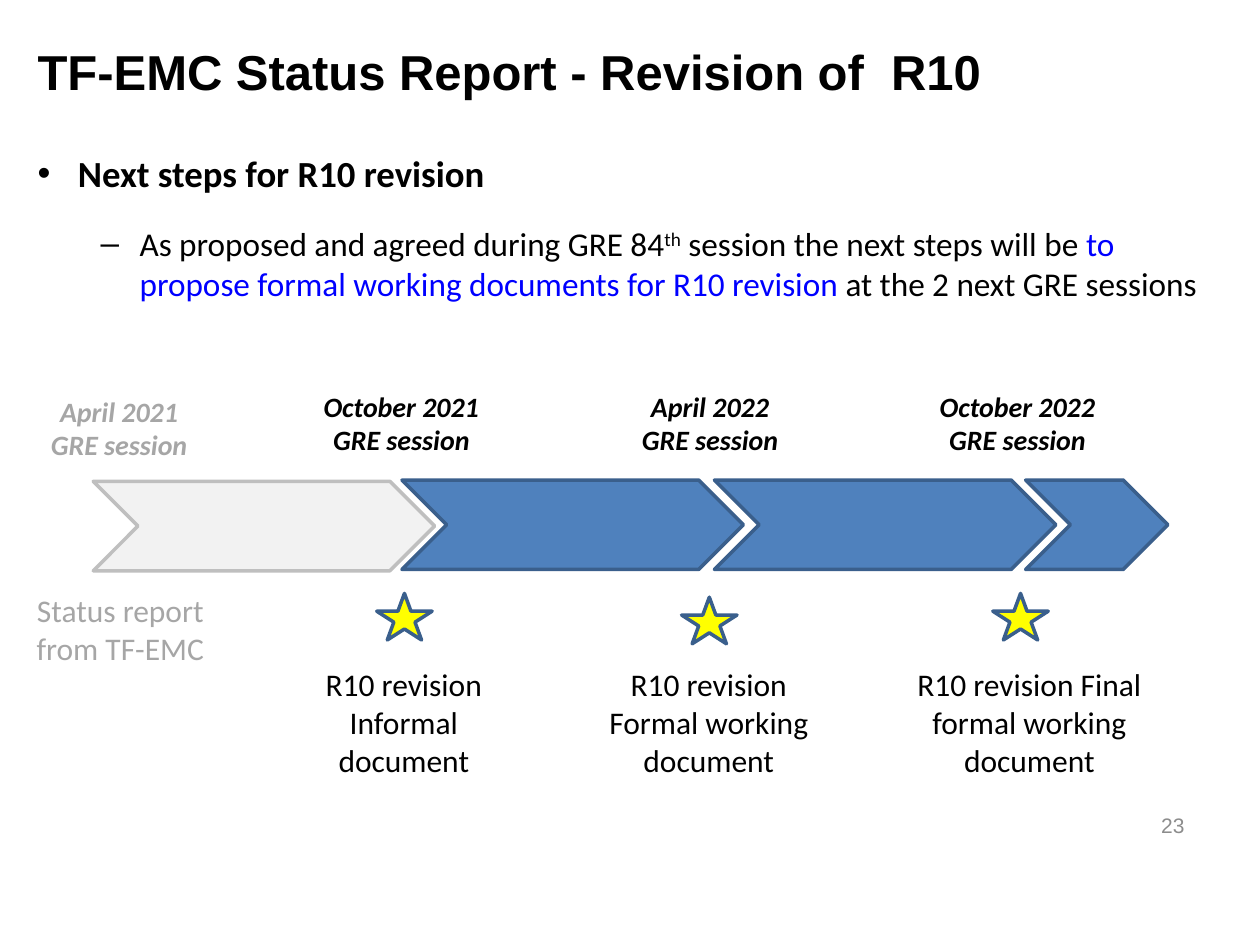
import pptx
import pptx.util
import pptx.dml.color
import pptx.enum.shapes
import pptx.enum.text
import pptx.oxml
import pptx.oxml.ns

Inches = pptx.util.Inches
Pt = pptx.util.Pt
ALIGN = pptx.enum.text.PP_ALIGN
ANCHOR = pptx.enum.text.MSO_ANCHOR
SHAPE = pptx.enum.shapes.MSO_SHAPE

COLORS = {
    "text": "000000", "muted": "A6A6A6", "number": "8C8C8C", "accent": "0000FF",
    "step": "4F81BD", "step_line": "3A5F8C", "past": "F2F2F2", "past_line": "BFBFBF",
    "star": "FFFF00",
}
TITLE = "TF-EMC Status Report - Revision of  R10"
PAGE_NUMBER = "23"
HEADING = "Next steps for R10 revision"
DETAIL = [
    ("As proposed and agreed during GRE 84", "text", False),
    ("th", "text", True),
    (" session the next steps will be ", "text", False),
    ("to propose formal working documents for R10 revision", "accent", False),
    (" at the 2 next GRE sessions", "text", False),
]
ARROWS = [
    (0.74, 3.82, 2.71, "past"),
    (3.19, 3.81, 2.71, "step"),
    (5.67, 3.81, 2.71, "step"),
    (8.14, 3.81, 1.13, "step"),
]
SESSIONS = [
    ("April 2021", 0, 3.08, "muted"),
    ("October 2021", 2.24, 3.04, "text"),
    ("April 2022", 4.69, 3.04, "text"),
    ("October 2022", 7.13, 3.04, "text"),
]
OUTCOMES = [
    ("Status report from TF-EMC", 0.01, 4.64, 1.89, 0.71, "muted"),
    ("R10 revision Informal document", 2.26, 5.23, 1.89, 1.01, "text"),
    ("R10 revision Formal working document", 4.68, 5.23, 1.89, 1.01, "text"),
    ("R10 revision Final formal working document", 7.02, 5.23, 2.3, 1.01, "text"),
]
STARS = [(2.99, 4.71), (5.41, 4.74), (7.88, 4.71)]


def rgb(name):
    return pptx.dml.color.RGBColor.from_string(COLORS[name])


def style(font, size, color="text", name="Calibri", bold=False, italic=False):
    font.size = Pt(size)
    font.name = name
    font.bold = bold
    font.italic = italic
    font.color.rgb = rgb(color)


def add_text(slide, place, lines, size, align=ALIGN.CENTER, anchor=ANCHOR.TOP, **look):
    box = slide.shapes.add_textbox(*map(Inches, place))
    frame = box.text_frame
    frame.word_wrap = True
    frame.vertical_anchor = anchor
    frame.text = "\n".join(lines)
    for para in frame.paragraphs:
        para.alignment = align
        style(para.font, size, **look)
    return frame


def add_figure(slide, kind, place, fill, line):
    shape = slide.shapes.add_shape(kind, *map(Inches, place))
    shape.shadow.inherit = False
    shape.fill.solid()
    shape.fill.fore_color.rgb = rgb(fill)
    shape.line.color.rgb = rgb(line)
    shape.line.width = Pt(2)


def add_bullet(para, symbol, margin, indent):
    properties = para._p.get_or_add_pPr()
    properties.set("marL", str(Inches(margin)))
    properties.set("indent", str(Inches(indent)))
    for tag, key, value in (("a:buFont", "typeface", "Arial"), ("a:buChar", "char", symbol)):
        element = pptx.oxml.parse_xml(f"<{tag} {pptx.oxml.ns.nsdecls('a')}/>")
        element.set(key, value)
        properties.append(element)
    para.space_after = Pt(12)


def add_body(slide):
    box = slide.shapes.add_textbox(Inches(0.2), Inches(1.15), Inches(9.48), Inches(1.65))
    frame = box.text_frame
    frame.word_wrap = True
    heading = frame.paragraphs[0]
    heading.text = HEADING
    add_bullet(heading, "•", 0.32, -0.32)
    style(heading.font, 21, bold=True)

    detail = frame.add_paragraph()
    detail.level = 1
    add_bullet(detail, "–", 0.81, -0.31)
    detail.space_before = Pt(4)
    style(detail.font, 19)
    for text, color, raised in DETAIL:
        span = detail.add_run()
        span.text = text
        style(span.font, 19, color)
        if raised:
            span._r.get_or_add_rPr().set("baseline", "30000")


def main():
    deck = pptx.Presentation()
    deck.slide_width = Inches(10)
    deck.slide_height = Inches(7.5)
    slide = deck.slides.add_slide(deck.slide_layouts[6])

    add_text(slide, (0.2, 0.21, 9.45, 0.71), [TITLE], 28, ALIGN.LEFT, ANCHOR.MIDDLE,
             name="Arial", bold=True)
    add_text(slide, (7.17, 6.35, 2.33, 0.4), [PAGE_NUMBER], 12, ALIGN.RIGHT, ANCHOR.MIDDLE,
             name="Arial", color="number")
    add_body(slide)

    for left, top, width, kind in ARROWS:
        add_figure(slide, SHAPE.CHEVRON, (left, top, width, 0.71), kind, kind + "_line")
    for left, top in STARS:
        add_figure(slide, SHAPE.STAR_5_POINT, (left, top, 0.44, 0.37), "star", "step_line")
    for date, left, top, color in SESSIONS:
        add_text(slide, (left, top, 1.89, 0.64), [date, "GRE session"], 16,
                 color=color, bold=True, italic=True)
    for text, *place, color in OUTCOMES:
        add_text(slide, place, [text], 18, color=color)

    deck.save("out.pptx")


if __name__ == "__main__":
    main()
